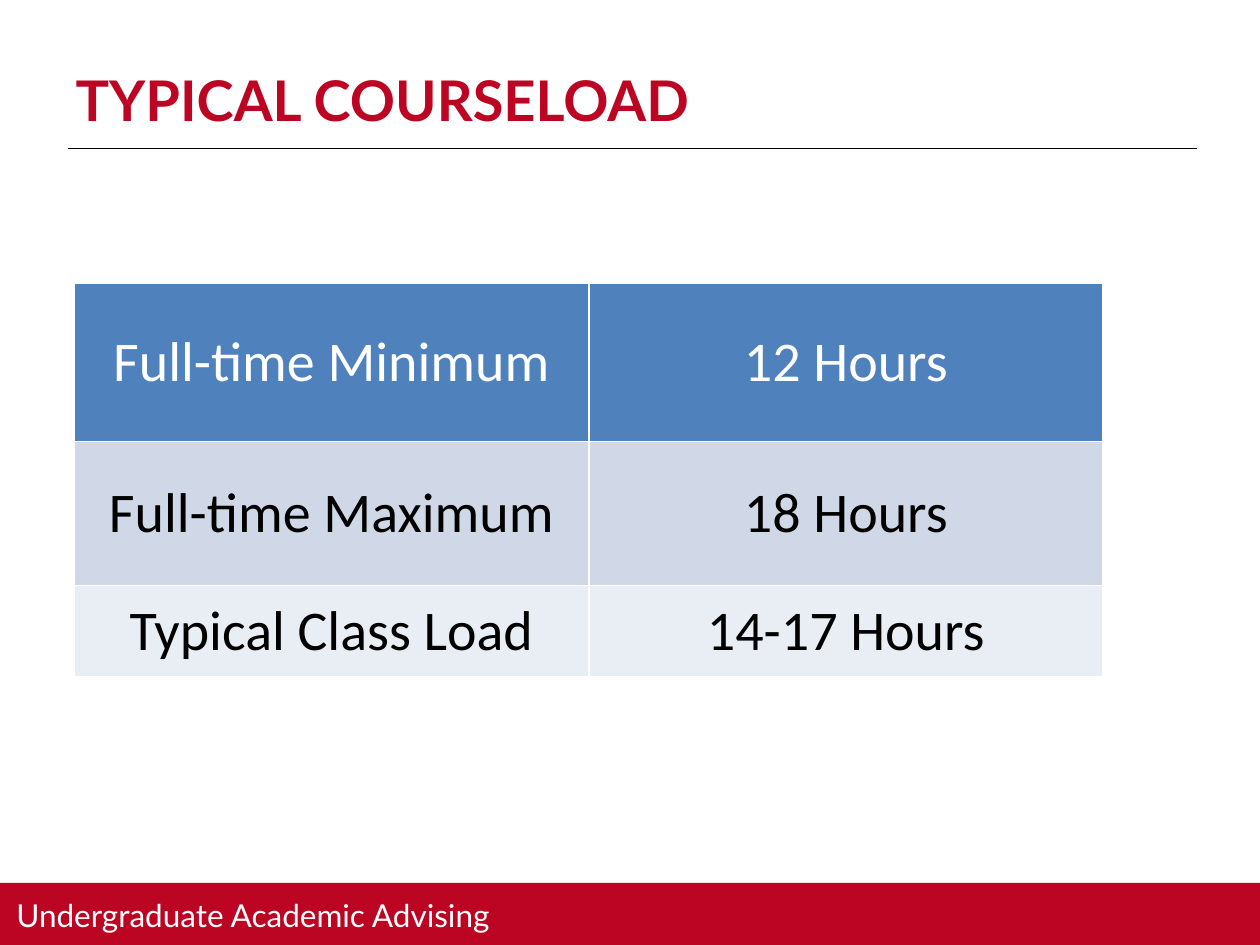
from pptx import Presentation
from pptx.dml.color import RGBColor
from pptx.enum.shapes import MSO_CONNECTOR, MSO_SHAPE
from pptx.enum.text import MSO_ANCHOR, PP_ALIGN
from pptx.util import Cm, Pt
from lxml.etree import SubElement
from pptx.oxml.ns import qn

RED, WHITE, BLACK = "BC0523", "FFFFFF", "000000"


def rgb(value):
    return RGBColor.from_string(value)


def write(tf, text, font="Lato", size=32, color=BLACK, bold=False, align=PP_ALIGN.LEFT):
    p = tf.paragraphs[0]
    p.alignment = align
    r = p.add_run()
    r.text = text
    r.font.name = font
    r.font.size = Pt(size)
    r.font.bold = bold
    r.font.color.rgb = rgb(color)


prs = Presentation()
prs.slide_width, prs.slide_height = Cm(25.4), Cm(19.05)
s = prs.slides.add_slide(prs.slide_layouts[5])

# Rule under the title
rule = s.shapes.add_connector(MSO_CONNECTOR.STRAIGHT, Cm(1.37), Cm(3), Cm(24.13), Cm(3))
rule.line.color.rgb = rgb(BLACK)
rule.line.width = Pt(0.75)
SubElement(rule._element.spPr, qn("a:effectLst"))

# Footer band
band = s.shapes.add_shape(MSO_SHAPE.RECTANGLE, 0, Cm(17.8), prs.slide_width, Cm(1.25))
band.shadow.inherit = False
band.fill.solid()
band.fill.fore_color.rgb = rgb(RED)
band.line.fill.background()

# Title
title = s.shapes.title
title.left, title.top, title.width, title.height = Cm(1.27), Cm(1.2), Cm(22.86), Cm(2.4)
title.text_frame.vertical_anchor = MSO_ANCHOR.TOP
write(title.text_frame, "TYPICAL COURSELOAD", color=RED, bold=True)

# Course load table: label, hours, row height, fill, text colour
rows = [
    ("Full-time Minimum", "12 Hours", 3.2, "4F81BD", WHITE),
    ("Full-time Maximum", "18 Hours", 2.9, "D0D8E8", BLACK),
    ("Typical Class Load", "14-17 Hours", 1.85, "E9EDF4", BLACK),
]
table = s.shapes.add_table(len(rows), 2, Cm(1.5), Cm(5.7), Cm(20.74), Cm(7.95)).table
for i, (label, hours, height, fill, color) in enumerate(rows):
    table.rows[i].height = Cm(height)
    for cell, text in zip(table.rows[i].cells, (label, hours)):
        cell.fill.solid()
        cell.fill.fore_color.rgb = rgb(fill)
        cell.vertical_anchor = MSO_ANCHOR.MIDDLE
        write(cell.text_frame, text, font="Calibri", color=color, align=PP_ALIGN.CENTER)

# Footer text
footer = s.shapes.add_textbox(Cm(0.08), Cm(17.93), Cm(10.54), Cm(1.22))
footer.text_frame.word_wrap = True
write(footer.text_frame, "Undergraduate Academic Advising", size=18, color=WHITE)

prs.save("out.pptx")
